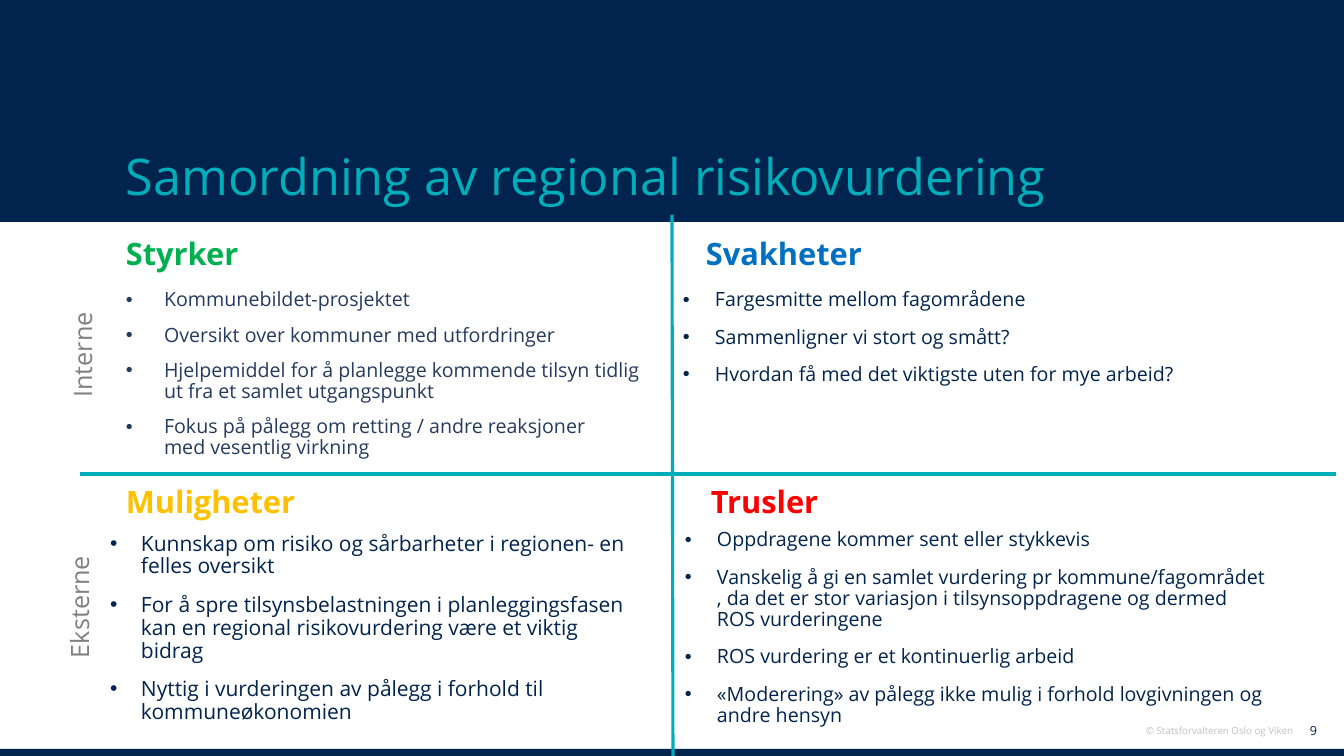
"""Build a SWOT slide on coordinating regional risk assessment."""
from lxml import etree
from pptx import Presentation
from pptx import util as u
from pptx.dml.color import RGBColor
from pptx.enum import shapes, text
from pptx.oxml.ns import qn

SLIDE_SIZE = (1344, 756)
SCALE = 12192000 / SLIDE_SIZE[0]
FONT = "Open Sans"
COLORS = {
    "navy": "00244E", "slate": "243B5F", "teal": "00ADBA", "gray": "808080",
    "silver": "BFC2C0", "green": "00B050", "blue": "0070C0",
    "amber": "FFC000", "red": "FF0000",
}
TITLE = "Samordning av regional risikovurdering"
QUADRANTS = [
    {"heading": "Styrker", "color": "green", "heading_at": (126, 239),
     "list_at": (126, 290, 530, 184), "indent": 38, "size": 14, "gap": 10,
     "text_color": "slate",
     "points": ["Kommunebildet-prosjektet",
                "Oversikt over kommuner med utfordringer",
                "Hjelpemiddel for å planlegge kommende tilsyn tidlig\vut fra et samlet utgangspunkt",
                "Fokus på pålegg om retting / andre reaksjoner\vmed vesentlig virkning"]},
    {"heading": "Svakheter", "color": "blue", "heading_at": (706, 239),
     "list_at": (683, 290, 566, 110), "indent": 32, "size": 14, "gap": 11.5,
     "text_color": "navy",
     "points": ["Fargesmitte mellom fagområdene",
                "Sammenligner vi stort og smått?",
                "Hvordan få med det viktigste uten for mye arbeid?"]},
    {"heading": "Muligheter", "color": "amber", "heading_at": (126, 487),
     "list_at": (110, 533, 535, 212), "indent": 31, "size": 15, "gap": 11.5,
     "text_color": "navy",
     "points": ["Kunnskap om risiko og sårbarheter i regionen- en felles oversikt",
                "For å spre tilsynsbelastningen i planleggingsfasen kan en regional risikovurdering være et viktig bidrag",
                "Nyttig i vurderingen av pålegg i forhold til kommuneøkonomien"]},
    {"heading": "Trusler", "color": "red", "heading_at": (711, 487),
     "list_at": (685, 530, 583, 216), "indent": 32, "size": 14, "gap": 11.5,
     "text_color": "navy",
     "points": ["Oppdragene kommer sent eller stykkevis",
                "Vanskelig å gi en samlet vurdering pr kommune/fagområdet , da det er stor variasjon i tilsynsoppdragene og dermed ROS vurderingene",
                "ROS vurdering er et kontinuerlig arbeid",
                "«Moderering» av pålegg ikke mulig i forhold lovgivningen og andre hensyn"]},
]
ROW_LABELS = [("Interne", (22, 335, 124, 40)), ("Eksterne", (19, 587, 124, 40))]
FOOTERS = [("© Statsforvalteren Oslo og Viken", 7, "silver", (1093, 720, 200, 22)),
           ("9", 9, "navy", (1297, 720, 20, 22))]
BANDS = [(0, 0, 1344, 222), (0, 749, 1344, 7)]
DIVIDERS = [(672, 215, 673, 756), (80, 474, 1336, 474)]


def px(*lengths):
    return [u.Emu(round(length * SCALE)) for length in lengths]


def rgb(name):
    return RGBColor.from_string(COLORS[name])


def apply(target, **values):
    for name, value in values.items():
        setattr(target, name, value)


def add_text(slide, box, lines, size, color, bold=False, indent=0, gap=0,
             align=text.PP_ALIGN.LEFT, anchor=text.MSO_ANCHOR.TOP):
    shape = slide.shapes.add_textbox(*px(*box))
    frame = shape.text_frame
    apply(frame, word_wrap=True, vertical_anchor=anchor, margin_left=0,
          margin_right=0, margin_top=0, margin_bottom=0)
    for index, line in enumerate(lines):
        paragraph = frame.paragraphs[0] if index == 0 else frame.add_paragraph()
        paragraph.text = line
        apply(paragraph, alignment=align, line_spacing=0.9,
              space_before=u.Pt(gap if index else 0))
        if indent:
            properties = paragraph._p.get_or_add_pPr()
            margin = px(indent)[0]
            properties.set("marL", str(margin))
            properties.set("indent", str(-margin))
            etree.SubElement(properties, qn("a:buFont")).set("typeface", "Arial")
            etree.SubElement(properties, qn("a:buChar")).set("char", "•")
        for run in paragraph.runs:
            apply(run.font, name=FONT, size=u.Pt(size), bold=bold)
            run.font.color.rgb = rgb(color)
    return shape


def add_band(slide, box):
    shape = slide.shapes.add_shape(shapes.MSO_SHAPE.RECTANGLE, *px(*box))
    shape.shadow.inherit = False
    shape.fill.solid()
    shape.fill.fore_color.rgb = rgb("navy")
    shape.line.fill.background()


def add_divider(slide, ends):
    line = slide.shapes.add_connector(shapes.MSO_CONNECTOR.STRAIGHT, *px(*ends))
    line.line.width = u.Pt(2.25)
    line.line.color.rgb = rgb("teal")
    etree.SubElement(line._element.spPr, qn("a:effectLst"))


def main():
    presentation = Presentation()
    presentation.slide_width, presentation.slide_height = px(*SLIDE_SIZE)
    slide = presentation.slides.add_slide(presentation.slide_layouts[6])
    middle = text.MSO_ANCHOR.MIDDLE
    for band in BANDS:
        add_band(slide, band)
    for label, size, color, box in FOOTERS:
        add_text(slide, box, [label], size, color,
                 align=text.PP_ALIGN.RIGHT, anchor=middle)
    add_text(slide, (126, 152, 1091, 62), [TITLE], 36, "teal")
    for quadrant in QUADRANTS:
        add_text(slide, (*quadrant["heading_at"], 300, 38),
                 [quadrant["heading"]], 22, quadrant["color"], bold=True)
        add_text(slide, quadrant["list_at"], quadrant["points"],
                 quadrant["size"], quadrant["text_color"],
                 indent=quadrant["indent"], gap=quadrant["gap"])
    for divider in DIVIDERS:
        add_divider(slide, divider)
    for label, box in ROW_LABELS:
        shape = add_text(slide, box, [label], 18, "gray",
                         align=text.PP_ALIGN.CENTER, anchor=middle)
        shape.rotation = 270
    presentation.save("out.pptx")


if __name__ == "__main__":
    main()
